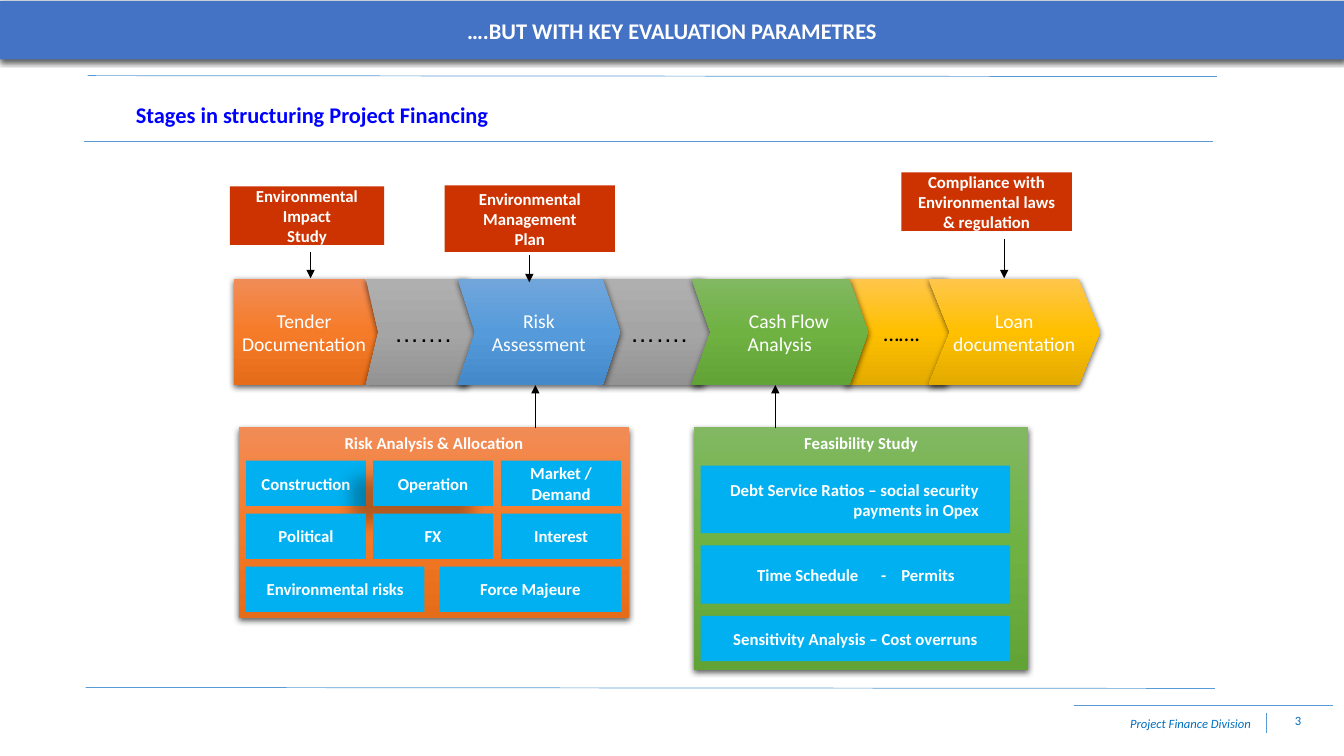
import copy

import lxml.etree
import pptx
import pptx.dml.color
import pptx.enum.shapes
import pptx.enum.text
import pptx.oxml.ns
import pptx.util

Inches = pptx.util.Inches
SHAPES = pptx.enum.shapes.MSO_SHAPE
ALIGN = pptx.enum.text.PP_ALIGN
ANCHOR = pptx.enum.text.MSO_ANCHOR

WHITE, BLACK, CYAN, RED, BLUE = "FFFFFF", "000000", "00B0F0", "CC3300", "5B9BD5"
GREY = ("AFAFAF", "A5A5A5", "939393")
YELLOW = ("FFC64B", "FFC000", "E3AB00")
ORANGE = ("F18C57", "F67B28", "E56C19")
SKY = ("71A6DB", "559BDB", "448ACA")
GREEN = ("81B861", "6FB242", "62A336")


def color(hex_value):
    return pptx.dml.color.RGBColor.from_string(hex_value)


def add_child(parent, tag, **attributes):
    child = lxml.etree.SubElement(parent, pptx.oxml.ns.qn(tag))
    for name, value in attributes.items():
        child.set(name, str(value))
    return child


def set_fill(shape, fill):
    """Fill with one colour, or with a top, middle and bottom colour."""
    if isinstance(fill, str):
        shape.fill.solid()
        shape.fill.fore_color.rgb = color(fill)
        return
    shape.fill.gradient()
    shape.fill.gradient_angle = 270
    stop_list = next(shape.element.iter(pptx.oxml.ns.qn("a:gsLst")))
    stop_list.append(copy.deepcopy(stop_list[-1]))
    for stop, position, value in zip(shape.fill.gradient_stops, (0, 0.5, 1), fill):
        stop.position = position
        stop.color.rgb = color(value)


def set_shadow(shape, opacity=63, blur=4.5, distance=1.5, direction=90):
    shape.shadow.inherit = False
    effects = next(shape.element.iter(pptx.oxml.ns.qn("a:effectLst")))
    shadow = add_child(effects, "a:outerShdw", blurRad=pptx.util.Pt(blur),
                       dist=pptx.util.Pt(distance), dir=direction * 60000,
                       rotWithShape=0)
    add_child(add_child(shadow, "a:srgbClr", val=BLACK), "a:alpha", val=opacity * 1000)


def set_text(shape, text, size=12, text_color=WHITE, bold=False, italic=False,
             font="Calibri", align=ALIGN.CENTER, anchor=ANCHOR.MIDDLE,
             insets=(0.1, 0.05, 0.1, 0.05)):
    frame = shape.text_frame
    frame.text = text
    frame.word_wrap = True
    frame.auto_size = pptx.enum.text.MSO_AUTO_SIZE.NONE
    frame.vertical_anchor = anchor
    (frame.margin_left, frame.margin_top,
     frame.margin_right, frame.margin_bottom) = map(Inches, insets)
    for paragraph in frame.paragraphs:
        paragraph.alignment = align
        paragraph.font.name = font
        paragraph.font.size = pptx.util.Pt(size)
        paragraph.font.bold = bold
        paragraph.font.italic = italic
        paragraph.font.color.rgb = color(text_color)


def add_box(slide, box, fill, text, kind=SHAPES.RECTANGLE, **text_format):
    shape = slide.shapes.add_shape(kind, *map(Inches, box))
    shape.shadow.inherit = False
    shape.line.fill.background()
    set_fill(shape, fill)
    set_text(shape, text, **text_format)
    return shape


def add_label(slide, box, text, **text_format):
    label = slide.shapes.add_textbox(*map(Inches, box))
    set_text(label, text, **text_format)
    return label


def add_line(slide, start, end, line_color=BLUE, width=0.5, arrow=False):
    line = slide.shapes.add_connector(pptx.enum.shapes.MSO_CONNECTOR.STRAIGHT,
                                      *map(Inches, start + end))
    line.line.color.rgb = color(line_color)
    line.line.width = pptx.util.Pt(width)
    properties = line.element.spPr
    if arrow:
        add_child(properties.find(pptx.oxml.ns.qn("a:ln")), "a:tailEnd", type="triangle")
    add_child(properties, "a:effectLst")


def add_arrow(slide, start, end):
    add_line(slide, start, end, BLACK, 0.75, arrow=True)


def add_header(slide, box):
    title = slide.shapes.title
    title.left, title.top, title.width, title.height = map(Inches, box)
    set_fill(title, "4472C4")
    set_shadow(title)
    set_text(title, "….BUT WITH KEY EVALUATION PARAMETRES", size=16, bold=True)
    left, top = box[:2]
    subtitle = add_label(slide, (left + 1.25, top + 0.97, 9, 0.43),
                         "Stages in structuring Project Financing", size=16,
                         text_color="0000FF", bold=True, align=ALIGN.LEFT,
                         anchor=ANCHOR.TOP)
    subtitle.text_frame.paragraphs[0].line_spacing = 0.9


def add_process(slide, box):
    left, top, _, height = box
    dots = "……."
    stages = [  # offset, width, point depth, colours, text, size, text colour, font
        (3.65, 1.13, 0.117, GREY, dots, 18, BLACK, "Arial"),
        (6.06, 1.13, 0.117, YELLOW, dots, 16, BLACK, "Calibri"),
        (0, 1.48, 0.17, ORANGE, "Tender\nDocumentation", 14, WHITE, "Calibri"),
        (1.31, 1.13, 0.117, GREY, dots, 18, BLACK, "Arial"),
        (2.22, 1.61, 0.164, SKY, "Risk\nAssessment", 14, WHITE, "Calibri"),
        (4.54, 1.75, 0.178, GREEN, "Cash Flow\nAnalysis", 14, WHITE, "Calibri"),
        (6.89, 1.7, 0.202, YELLOW, "Loan\ndocumentation", 14, WHITE, "Calibri"),
    ]
    for offset, width, depth, fill, text, size, text_color, font in stages:
        kind = SHAPES.CHEVRON if offset else SHAPES.PENTAGON
        stage = add_box(slide, (left + offset, top, width, height), fill, text, kind,
                        size=size, text_color=text_color, font=font,
                        insets=(0, 0, 0, 0))
        stage.adjustments[0] = depth
        set_shadow(stage)
        if text.startswith("Cash"):
            properties = stage.text_frame.paragraphs[0]._p.get_or_add_pPr()
            properties.set("marL", str(Inches(0.18)))


def add_panel(slide, box, fill, heading):
    set_shadow(add_box(slide, box, fill, heading, bold=True, anchor=ANCHOR.TOP))


def add_risk_panel(slide, box):
    add_panel(slide, box, ORANGE, "Risk Analysis & Allocation")
    left, top = box[0] + 0.07, box[1] + 0.33
    rows = [[(0, 1.19, "Construction"), (1.26, 1.19, "Operation"),
             (2.53, 1.19, "Market /\nDemand")],
            [(0, 1.19, "Political"), (1.26, 1.19, "FX"), (2.53, 1.19, "Interest")],
            [(0, 1.77, "Environmental risks"), (1.92, 1.8, "Force Majeure")]]
    for row_index, row in enumerate(rows):
        for offset, width, text in row:
            risk = add_box(slide, (left + offset, top + row_index * 0.525, width, 0.45),
                           CYAN, text, bold=True)
            if text == "Operation":
                set_shadow(risk, 28, 11.8, 19.7, 141)


def add_feasibility_panel(slide, box):
    add_panel(slide, box, GREEN, "Feasibility Study")
    left, top = box[0] + 0.07, box[1]
    add_box(slide, (left, top + 0.38, 3.07, 0.67), CYAN,
            "Debt Service Ratios – social security\npayments in Opex", bold=True,
            align=ALIGN.RIGHT, insets=(0.1, 0.05, 0.31, 0.05))
    add_box(slide, (left, top + 1.87, 3.07, 0.45), CYAN,
            "Sensitivity Analysis – Cost overruns", bold=True)
    schedule = add_box(slide, (left, top + 1.17, 3.07, 0.58), CYAN,
                       "Time Schedule\t-\tPermits", bold=True, align=ALIGN.LEFT,
                       insets=(0.56, 0.05, 0.1, 0.05))
    properties = schedule.text_frame.paragraphs[0]._p.get_or_add_pPr()
    tabs = lxml.etree.Element(pptx.oxml.ns.qn("a:tabLst"))
    properties.insert(0, tabs)
    for position in (1.23, 1.43):
        add_child(tabs, "a:tab", pos=Inches(position), algn="l")


def add_footer(slide, box):
    left, top, width, _ = box
    add_label(slide, (left + 0.46, top - 0.02, 1.42, 0.4), "Project Finance Division",
              size=9, text_color="0070C0", italic=True, align=ALIGN.LEFT)
    add_label(slide, (left + 1.88, top - 0.05, 0.69, 0.4), "3", size=9,
              text_color="0070C0")
    add_line(slide, (left, top), (left + width, top))
    add_line(slide, (left + 1.91, top + 0.07), (left + 1.91, top + 0.27))


def main():
    presentation = pptx.Presentation()
    presentation.slide_width, presentation.slide_height = Inches(13.33), Inches(7.5)
    slide = presentation.slides.add_slide(presentation.slide_layouts[5])
    add_header(slide, (0, 0.01, 13.33, 0.58))
    add_process(slide, (2.32, 2.77, 8.59, 1.05))
    add_risk_panel(slide, (2.37, 4.24, 3.87, 1.89))
    add_feasibility_panel(slide, (6.88, 4.24, 3.32, 2.41))
    for x in (5.31, 7.69):
        add_arrow(slide, (x, 4.25), (x, 3.82))
    callouts = [
        ((2.28, 1.85, 1.53, 0.58), "Environmental\nImpact\nStudy", 3.08, 2.5, 2.76),
        ((4.41, 1.84, 1.69, 0.66), "Environmental\nManagement\nPlan", 5.25, 2.53, 2.8),
        ((8.94, 1.71, 1.69, 0.58), "Compliance with\nEnvironmental laws & regulation",
         9.96, 2.37, 2.76),
    ]
    for box, text, x, start, end in callouts:
        add_box(slide, box, RED, text, bold=True)
        add_arrow(slide, (x, start), (x, end))
    for left, top, drop in ((0.83, 1.4, 0), (0.87, 0.75, 0.01), (0.85, 6.82, 0.01)):
        add_line(slide, (left, top), (left + 11.2, top + drop))
    add_footer(slide, (10.65, 7, 2.57, 0.4))
    presentation.save("out.pptx")


if __name__ == "__main__":
    main()
